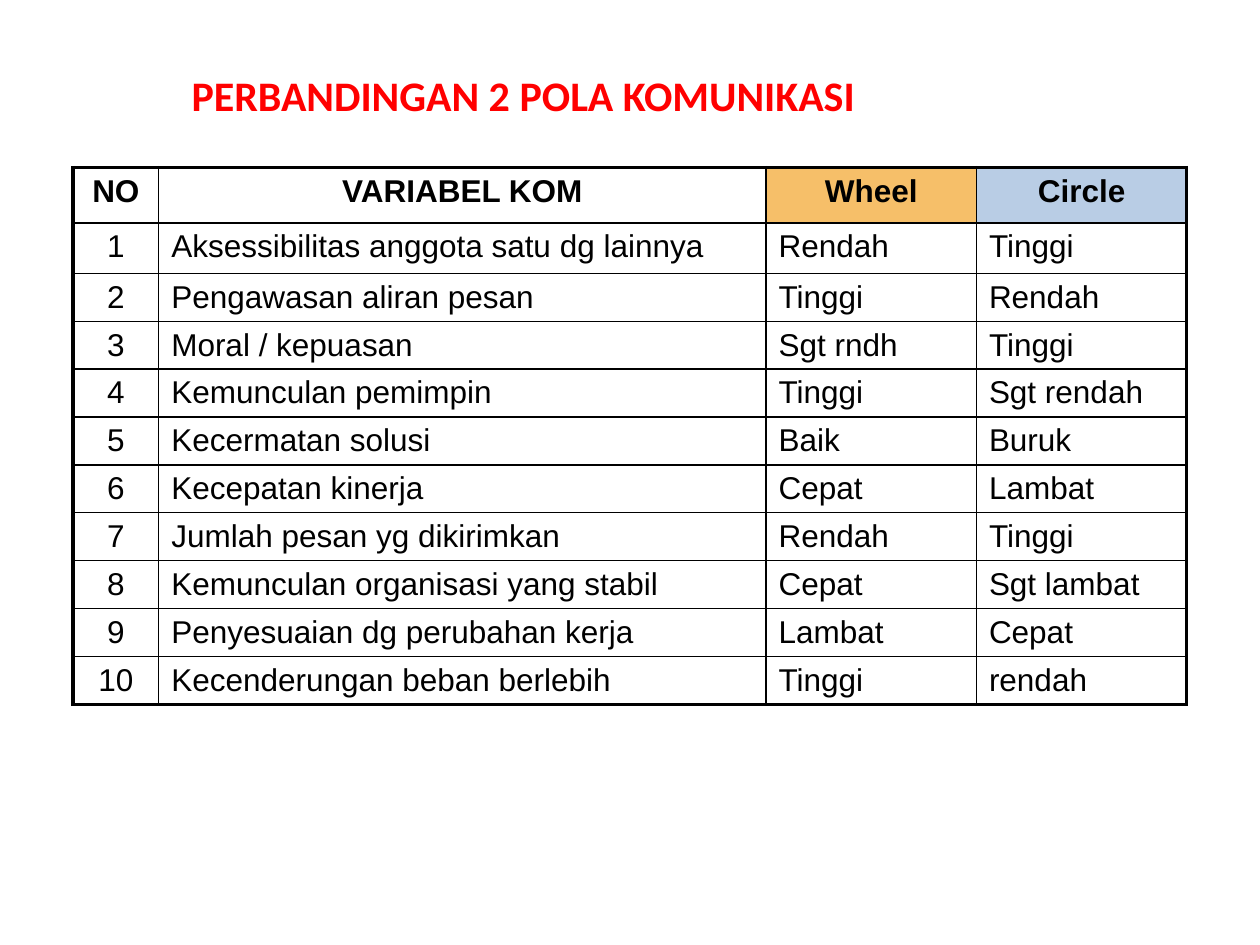
from lxml.etree import SubElement as Sub
from pptx import Presentation
from pptx.dml.color import RGBColor
from pptx.enum.text import MSO_ANCHOR as Anchor, PP_ALIGN as Align
from pptx.oxml.ns import qn
from pptx.util import Inches, Pt

WIDE, HIGH = 10, 7.5
THIN, THICK = 1, 2.25
BLACK, RED = "000000", "FF0000"
COLS = [0.68, 4.82, 1.67, 1.67]
ROWS = [0.44, 0.4] + [0.38] * 9
TINTS = [None, None, "F6BF69", "B9CDE5"]
HEAD = ["NO", "VARIABEL KOM", "Wheel", "Circle"]
DATA = [
    ("Aksessibilitas anggota satu dg lainnya", "Rendah", "Tinggi"),
    ("Pengawasan aliran pesan", "Tinggi", "Rendah"),
    ("Moral / kepuasan", "Sgt rndh", "Tinggi"),
    ("Kemunculan pemimpin", "Tinggi", "Sgt rendah"),
    ("Kecermatan solusi", "Baik", "Buruk"),
    ("Kecepatan kinerja", "Cepat", "Lambat"),
    ("Jumlah pesan yg dikirimkan", "Rendah", "Tinggi"),
    ("Kemunculan organisasi yang stabil", "Cepat", "Sgt lambat"),
    ("Penyesuaian dg perubahan kerja", "Lambat", "Cepat"),
    ("Kecenderungan beban berlebih", "Tinggi", "rendah"),
]


def color(code):
    return RGBColor.from_string(code)


def write(frame, text, size=18, face="Arial", tint=BLACK, bold=False,
          align=Align.LEFT):
    para = frame.paragraphs[0]
    para.alignment = align
    run = para.add_run()
    run.text = text
    font = run.font
    font.size, font.name, font.bold = Pt(size), face, bold
    font.color.rgb = color(tint)


def edge(cell, side, width):
    props = cell._tc.get_or_add_tcPr()
    line = Sub(props, qn(f"a:ln{side}"), w=str(Pt(width)))
    fill = Sub(line, qn("a:solidFill"))
    Sub(fill, qn("a:srgbClr"), val=BLACK)


def title(slide, box):
    shape = slide.shapes.title
    shape.left, shape.top, shape.width, shape.height = map(Inches, box)
    frame = shape.text_frame
    frame.word_wrap = True
    frame.vertical_anchor = Anchor.TOP
    write(frame, "PERBANDINGAN 2 POLA KOMUNIKASI", size=24, face="Calibri",
          tint=RED, bold=True)


def grid(slide, box):
    rows = [HEAD] + [(str(n), *row) for n, row in enumerate(DATA, 1)]
    table = slide.shapes.add_table(len(rows), len(HEAD),
                                   *map(Inches, box)).table
    table.first_row = table.horz_banding = False
    for col, width in zip(table.columns, COLS):
        col.width = Inches(width)
    for row, height in zip(table.rows, ROWS):
        row.height = Inches(height)

    last_r, last_c = len(rows) - 1, len(HEAD) - 1
    for r, row in enumerate(rows):
        for c, text in enumerate(row):
            cell = table.cell(r, c)
            cell.margin_top, cell.margin_bottom = Inches(0.05), Inches(0.04)
            top = r == 0
            mid = top or c == 0
            write(cell.text_frame, text, bold=top,
                  align=Align.CENTER if mid else Align.LEFT)
            # Thick frame outside, thin rules inside
            outer = {"L": c == 0, "R": c == last_c, "T": top, "B": r == last_r}
            for side, out in outer.items():
                edge(cell, side, THICK if out else THIN)
            if top and TINTS[c]:
                cell.fill.solid()
                cell.fill.fore_color.rgb = color(TINTS[c])
            else:
                cell.fill.background()


def main():
    deck = Presentation()
    deck.slide_width, deck.slide_height = Inches(WIDE), Inches(HIGH)
    slide = deck.slides.add_slide(deck.slide_layouts[5])
    grid(slide, (0.58, 1.33, sum(COLS), sum(ROWS)))
    title(slide, (1.42, 0.5, 7.07, 0.51))
    deck.save("out.pptx")


if __name__ == "__main__":
    main()
